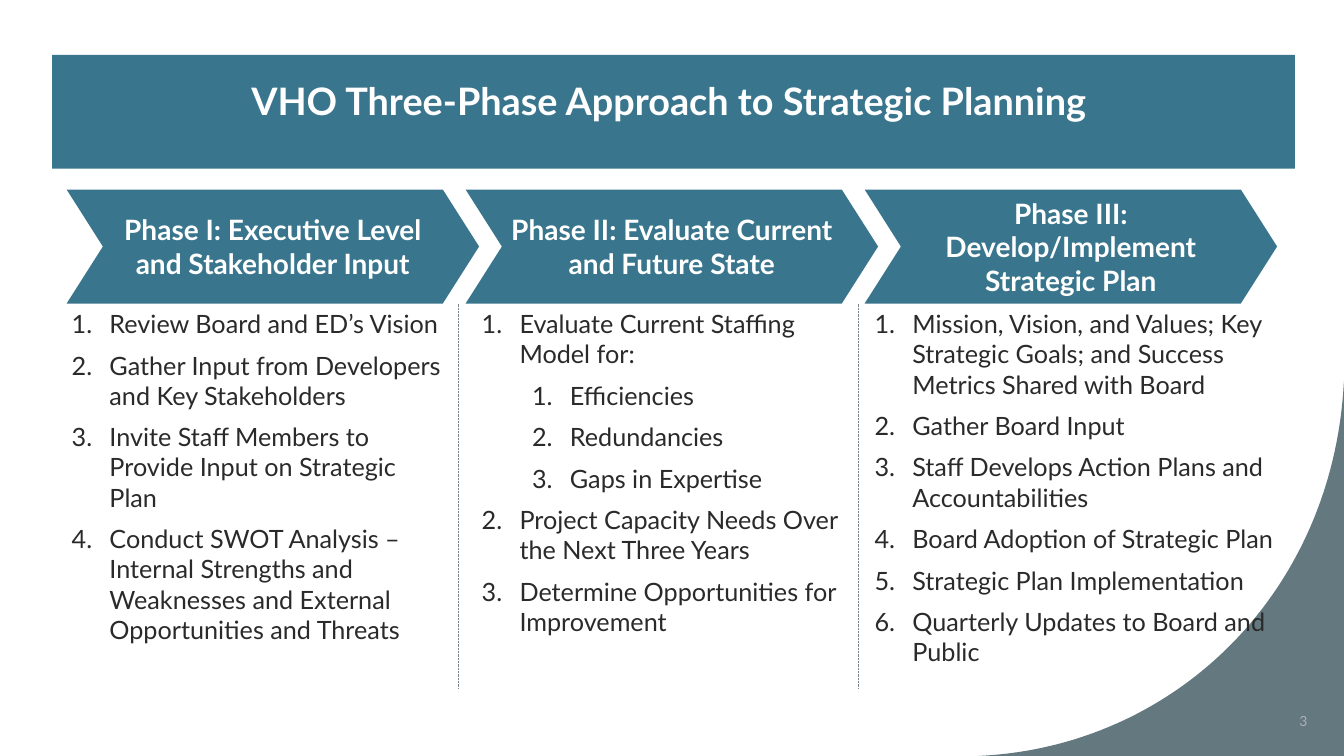
from dataclasses import dataclass

from lxml import etree
from pptx import Presentation
from pptx.dml.color import RGBColor
from pptx.enum.dml import MSO_LINE
from pptx.enum.shapes import MSO_CONNECTOR, MSO_SHAPE
from pptx.enum.text import MSO_ANCHOR, PP_ALIGN
from pptx.oxml.ns import qn
from pptx.shapes.autoshape import Shape
from pptx.slide import Slide
from pptx.text.text import _Paragraph
from pptx.util import Pt

TEAL = RGBColor(0x39, 0x76, 0x8D)
SLATE = RGBColor(0x63, 0x78, 0x7F)
DIVIDER_GRAY = RGBColor(0x7A, 0x85, 0x92)
NUMBER_GRAY = RGBColor(0xAD, 0xAF, 0xBB)
INK = RGBColor(0x2A, 0x2A, 0x2A)
WHITE = RGBColor(0xFF, 0xFF, 0xFF)

RECTANGLE = MSO_SHAPE.RECTANGLE
CHEVRON = MSO_SHAPE.CHEVRON
STRAIGHT = MSO_CONNECTOR.STRAIGHT
DOTTED = MSO_LINE.ROUND_DOT
TOP, MIDDLE, BOTTOM = MSO_ANCHOR.TOP, MSO_ANCHOR.MIDDLE, MSO_ANCHOR.BOTTOM
LEFT, CENTER, RIGHT = PP_ALIGN.LEFT, PP_ALIGN.CENTER, PP_ALIGN.RIGHT

FONT = "Lato"
SLIDE_WIDTH, SLIDE_HEIGHT = 960, 540
CHEVRON_LEFT, CHEVRON_TOP, CHEVRON_STEP = 47.6, 135.4, 285
CHEVRON_WIDTH, CHEVRON_HEIGHT = 294.6, 81.4
LIST_TOP = CHEVRON_TOP + CHEVRON_HEIGHT
DIVIDER_LEFT, DIVIDER_STEP, DIVIDER_BOTTOM = 327.2, 285.6, 491.8
HANGING = 27
LEVEL_STEP = 36


@dataclass(frozen=True)
class Step:
    text: str
    level: int = 0


@dataclass(frozen=True)
class Phase:
    heading: str
    list_left: float
    list_width: float
    left_inset: float
    steps: tuple[Step, ...]


PHASES = (
    Phase("Phase I: Executive Level and Stakeholder Input", 51.2, 272.2, 0, (
        Step("Review Board and ED’s Vision"),
        Step("Gather Input from Developers and Key Stakeholders"),
        Step("Invite Staff Members to Provide Input on Strategic Plan"),
        Step("Conduct SWOT Analysis – Internal Strengths and Weaknesses "
             "and External Opportunities and Threats"),
    )),
    Phase("Phase II: Evaluate Current and Future State", 337, 272.2, 7.2, (
        Step("Evaluate Current Staffing Model for:"),
        Step("Efficiencies", 1),
        Step("Redundancies", 1),
        Step("Gaps in Expertise", 1),
        Step("Project Capacity Needs Over the Next Three Years"),
        Step("Determine Opportunities for Improvement"),
    )),
    Phase("Phase III: Develop/Implement Strategic Plan", 617.6, 327.6, 7.2, (
        Step("Mission, Vision, and Values; Key Strategic Goals; "
             "and Success Metrics Shared with Board"),
        Step("Gather Board Input"),
        Step("Staff Develops Action Plans and Accountabilities"),
        Step("Board Adoption of Strategic Plan"),
        Step("Strategic Plan Implementation"),
        Step("Quarterly Updates to Board and Public"),
    )),
)


def paint(shape: Shape, color: RGBColor) -> None:
    shape.shadow.inherit = False
    shape.fill.solid()
    shape.fill.fore_color.rgb = color
    shape.line.fill.background()


def set_frame(shape: Shape, anchor: MSO_ANCHOR, left_inset: float = 7.2,
              right_inset: float = 7.2, bottom_inset: float = 3.6) -> None:
    frame = shape.text_frame
    frame.word_wrap = True
    frame.vertical_anchor = anchor
    frame.margin_left = Pt(left_inset)
    frame.margin_right = Pt(right_inset)
    frame.margin_bottom = Pt(bottom_inset)


def write(para: _Paragraph, text: str, size: float, color: RGBColor,
          align: PP_ALIGN, bold: bool = False, spacing: float = 0) -> None:
    para.text = text
    para.alignment = align
    para.space_before = para.space_after = Pt(spacing)
    para.font.name = FONT
    para.font.size = Pt(size)
    para.font.bold = bold
    para.font.color.rgb = color


def number(para: _Paragraph, level: int) -> None:
    """Give the paragraph an automatic number with a hanging indent."""
    para.level = level
    properties = para._p.get_or_add_pPr()
    properties.set("marL", str(Pt(HANGING + LEVEL_STEP * level)))
    properties.set("indent", str(-Pt(HANGING)))
    bullet = etree.Element(qn("a:buAutoNum"), type="arabicPeriod")
    properties.find(qn("a:spcAft")).addnext(bullet)


def add_corner(page: Slide) -> None:
    """Fill the lower right corner outside a cubic curve."""
    curve = ((699, 540), (840.2, 533.5), (952.6, 422.6), (960, 272))
    points = []
    for index in range(61):
        t = index / 60
        weights = ((1 - t) ** 3, 3 * t * (1 - t) ** 2, 3 * t ** 2 * (1 - t), t ** 3)
        x, y = (sum(w * point[axis] for w, point in zip(weights, curve))
                for axis in (0, 1))
        points.append((Pt(x), Pt(y)))
    builder = page.shapes.build_freeform(*points[0])
    builder.add_line_segments(points[1:] + [(Pt(SLIDE_WIDTH), Pt(SLIDE_HEIGHT))])
    paint(builder.convert_to_shape(), SLATE)


def add_title(page: Slide) -> None:
    bar = page.shapes.add_shape(RECTANGLE, Pt(37.2), Pt(39.2), Pt(887.8), Pt(81.2))
    paint(bar, TEAL)
    set_frame(bar, BOTTOM, right_inset=14, bottom_inset=32.6)
    write(bar.text_frame.paragraphs[0],
          "VHO Three-Phase Approach to Strategic Planning",
          27, WHITE, CENTER, bold=True)


def add_page_number(page: Slide) -> None:
    box = page.shapes.add_textbox(Pt(908.6), Pt(500.4), Pt(32.4), Pt(28.8))
    set_frame(box, MIDDLE)
    write(box.text_frame.paragraphs[0], "3", 10, NUMBER_GRAY, RIGHT)


def add_heading(page: Slide, phase: Phase, column: int) -> None:
    chevron = page.shapes.add_shape(
        CHEVRON, Pt(CHEVRON_LEFT + column * CHEVRON_STEP), Pt(CHEVRON_TOP),
        Pt(CHEVRON_WIDTH), Pt(CHEVRON_HEIGHT))
    chevron.adjustments[0] = 0.318
    paint(chevron, TEAL)
    set_frame(chevron, MIDDLE, left_inset=5.8, right_inset=5.8)
    write(chevron.text_frame.paragraphs[0], phase.heading,
          20, WHITE, CENTER, bold=True, spacing=6)


def add_steps(page: Slide, phase: Phase) -> None:
    box = page.shapes.add_textbox(Pt(phase.list_left), Pt(LIST_TOP),
                                  Pt(phase.list_width), Pt(280))
    set_frame(box, TOP, phase.left_inset)
    frame = box.text_frame
    for index, step in enumerate(phase.steps):
        para = frame.add_paragraph() if index else frame.paragraphs[0]
        write(para, step.text, 18, INK, LEFT, spacing=4)
        number(para, step.level)


def add_divider(page: Slide, gap: int) -> None:
    x = Pt(DIVIDER_LEFT + gap * DIVIDER_STEP)
    divider = page.shapes.add_connector(STRAIGHT, x, Pt(LIST_TOP), x, Pt(DIVIDER_BOTTOM))
    divider.line.color.rgb = DIVIDER_GRAY
    divider.line.width = Pt(0.5)
    divider.line.dash_style = DOTTED
    etree.SubElement(divider._element.spPr, qn("a:effectLst"))


def main() -> None:
    deck = Presentation()
    deck.slide_width, deck.slide_height = Pt(SLIDE_WIDTH), Pt(SLIDE_HEIGHT)
    page = deck.slides.add_slide(deck.slide_layouts[6])
    add_corner(page)
    add_title(page)
    add_page_number(page)
    for column, phase in enumerate(PHASES):
        add_heading(page, phase, column)
        add_steps(page, phase)
    for gap in range(len(PHASES) - 1):
        add_divider(page, gap)
    deck.save("out.pptx")


if __name__ == "__main__":
    main()
